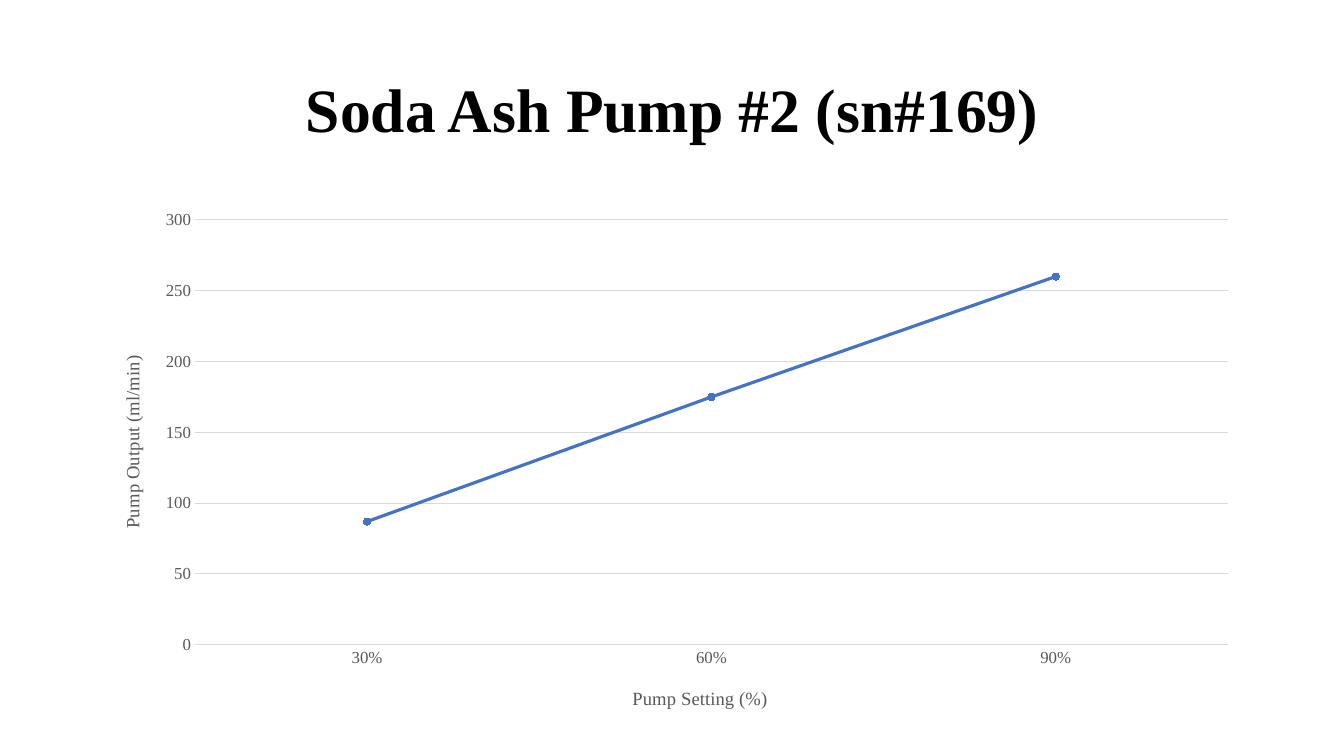
from lxml.etree import SubElement
from pptx import Presentation
from pptx.chart.data import CategoryChartData
from pptx.dml.color import RGBColor
from pptx.enum.chart import XL_CHART_TYPE as ChartType, XL_MARKER_STYLE as Marker, XL_TICK_MARK as Tick
from pptx.enum.text import MSO_ANCHOR as Anchor, PP_ALIGN as Align
from pptx.oxml import parse_xml
from pptx.oxml.ns import nsdecls, qn
from pptx.util import Emu, Pt

TITLE = "Soda Ash Pump #2 (sn#169)"
SETTINGS = [0.3, 0.6, 0.9]
OUTPUTS = [87, 175, 260]
FONT = "Times New Roman"
BLACK, GREY, GRID, BLUE = "000000", "595959", "D9D9D9", "4472C4"

TITLE_BOX = (93, 40, 1159, 146)
CHART_BOX = (93, 202, 1159, 526)
PLOT_BOX = (195, 220, 1033, 425)
SETTING_TITLE = ("Pump Setting (%)", (629, 683), 0)
OUTPUT_TITLE = ("Pump Output (ml/min)", (117, 352), -90)


def px(length):
    return Emu(round(length * 914400 / 100.8))


def color(value):
    return RGBColor.from_string(value)


def style_font(font, size, value, bold=False):
    font.name, font.size, font.bold = FONT, Pt(size), bold
    font.color.rgb = color(value)


def style_line(line, value, width):
    line.color.rgb = color(value)
    line.width = Pt(width)


def place(layout, box):
    for child in list(layout):
        layout.remove(child)
    manual = SubElement(layout, qn("c:manualLayout"))
    left, top, width, height = CHART_BOX
    fractions = [(box[0] - left) / width, (box[1] - top) / height]
    if len(box) == 4:
        SubElement(manual, qn("c:layoutTarget")).set("val", "inner")
        fractions += [box[2] / width, box[3] / height]
    for mode in ("xMode", "yMode"):
        SubElement(manual, qn(f"c:{mode}")).set("val", "edge")
    for name, fraction in zip("xywh", fractions):
        SubElement(manual, qn(f"c:{name}")).set("val", f"{fraction:.4f}")


def get_layout(parent, position):
    layout = parent.find(qn("c:layout"))
    if layout is None:
        layout = parse_xml(f"<c:layout {nsdecls('c')}/>")
        parent.insert(position, layout)
    return layout


def style_axis(axis, text, corner, angle):
    axis.major_tick_mark = axis.minor_tick_mark = Tick.NONE
    style_font(axis.tick_labels.font, 12, GREY)
    axis.has_title = True
    frame = axis.axis_title.text_frame
    frame.text = text
    style_font(frame.paragraphs[0].runs[0].font, 13.3, GREY)
    element = axis.axis_title._element
    body = element.find(".//" + qn("a:bodyPr"))
    body.set("rot", str(angle * 60000))
    body.set("vert", "horz")
    place(get_layout(element, 1), corner)


def add_title(slide):
    frame = slide.shapes.add_textbox(*map(px, TITLE_BOX)).text_frame
    frame.word_wrap = True
    frame.vertical_anchor = Anchor.MIDDLE
    frame.text = TITLE
    paragraph = frame.paragraphs[0]
    paragraph.alignment = Align.CENTER
    paragraph.line_spacing = 0.9
    style_font(paragraph.runs[0].font, 44, BLACK, True)


def add_pump_chart(slide):
    data = CategoryChartData()
    data.categories = SETTINGS
    data.categories.number_format = "0%"
    data.add_series("Series 1", OUTPUTS)
    chart = slide.shapes.add_chart(ChartType.LINE_MARKERS_STACKED, *map(px, CHART_BOX), data).chart
    chart.has_title = chart.has_legend = False
    style_font(chart.font, 10, BLACK)
    place(get_layout(chart._chartSpace.chart.plotArea, 0), PLOT_BOX)

    setting_axis, output_axis = chart.category_axis, chart.value_axis
    style_axis(setting_axis, *SETTING_TITLE)
    style_axis(output_axis, *OUTPUT_TITLE)
    setting_axis.tick_labels.number_format = "0%"
    setting_axis.tick_labels.number_format_is_linked = False
    style_line(setting_axis.format.line, GRID, 0.75)
    output_axis.minimum_scale, output_axis.maximum_scale, output_axis.major_unit = 0, 300, 50
    output_axis.format.line.fill.background()
    style_line(output_axis.major_gridlines.format.line, GRID, 0.75)

    chart.plots[0].vary_by_categories = False
    series = chart.plots[0].series[0]
    series.smooth = False
    style_line(series.format.line, BLUE, 2.25)
    marker = series.marker
    marker.style, marker.size = Marker.CIRCLE, 5
    marker.format.fill.solid()
    marker.format.fill.fore_color.rgb = color(BLUE)
    style_line(marker.format.line, BLUE, 0.75)


def main():
    presentation = Presentation()
    presentation.slide_width, presentation.slide_height = px(1344), px(756)
    slide = presentation.slides.add_slide(presentation.slide_layouts[6])
    add_title(slide)
    add_pump_chart(slide)
    presentation.save("out.pptx")


if __name__ == "__main__":
    main()
